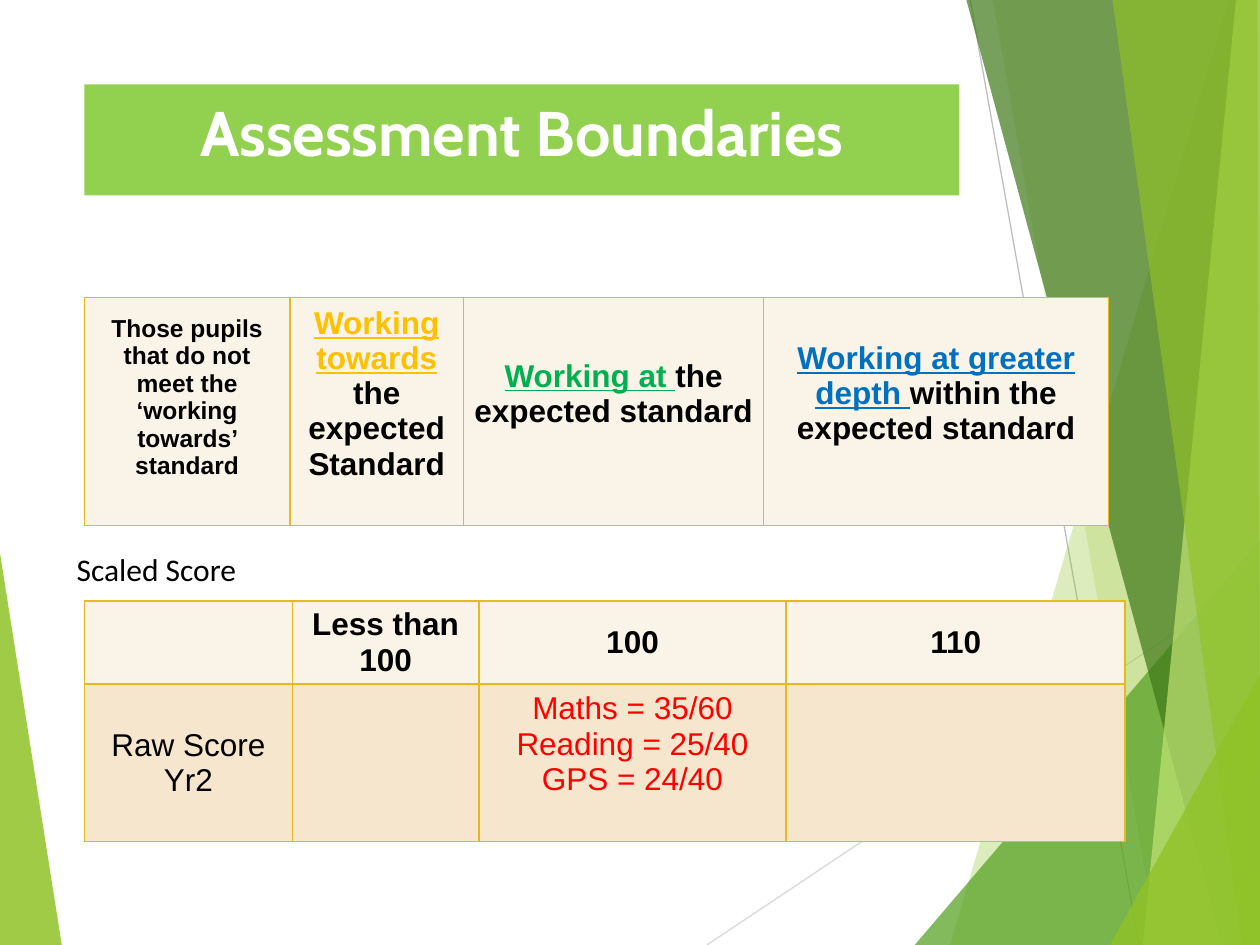
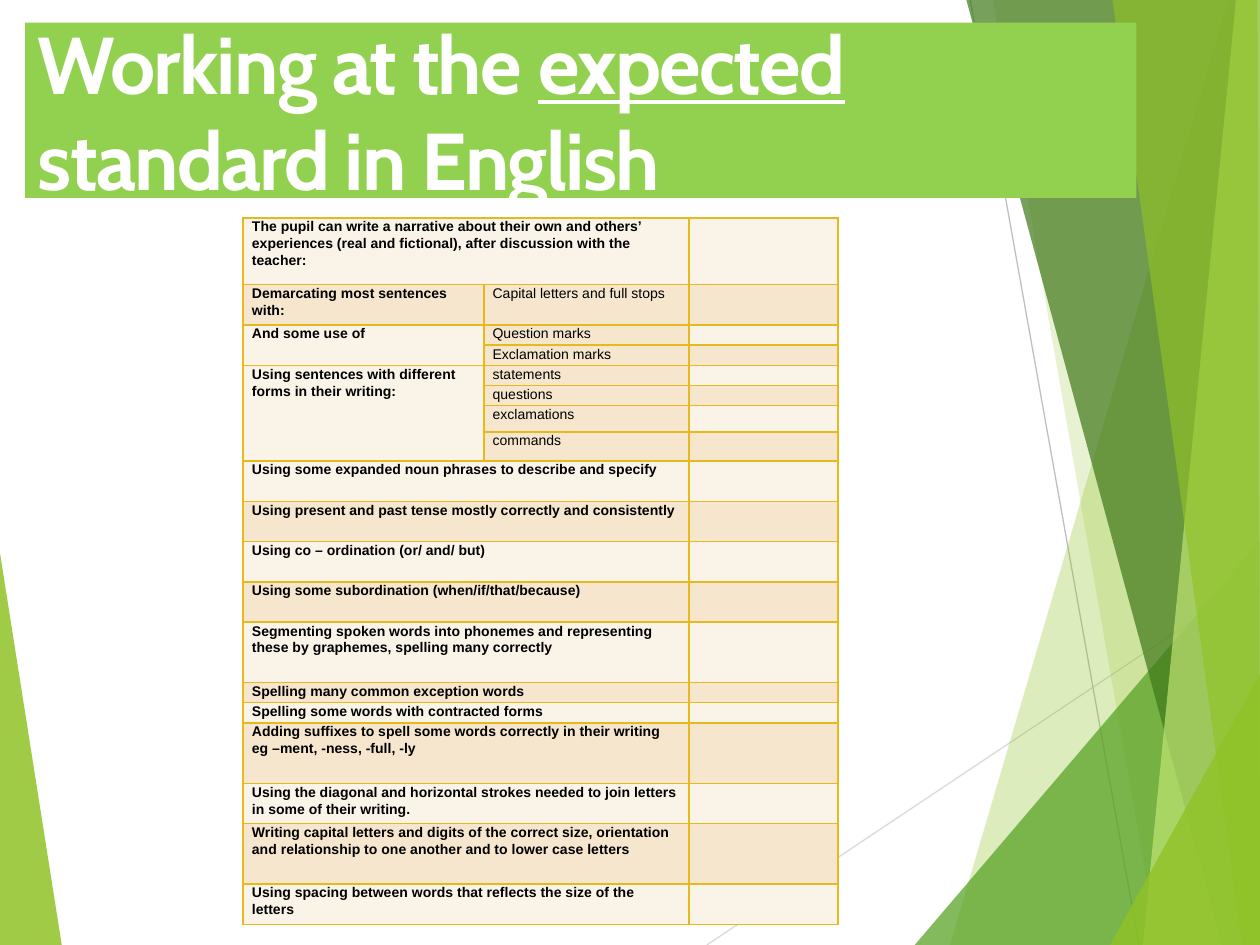
"""Builds two slides about assessment boundaries and writing standards."""
import dataclasses

import pptx
import pptx.dml.color
import pptx.enum.shapes
import pptx.enum.text
import pptx.oxml.ns
import pptx.util
from lxml import etree

ALIGN = pptx.enum.text.PP_ALIGN
ANCHOR = pptx.enum.text.MSO_ANCHOR


@dataclasses.dataclass(frozen=True)
class Theme:
    """Colours, fonts and type sizes of the slides."""
    band: str = "92D050"
    white: str = "FFFFFF"
    ink: str = "000000"
    gold: str = "E6B91E"
    light: str = "FAF3E8"
    dark: str = "F5E6CD"
    leaf: str = "90C226"
    grass: str = "54A021"
    forest: str = "3F7819"
    lime: str = "C0E474"
    towards: str = "FFC000"
    expected: str = "00B050"
    greater: str = "0070C0"
    score: str = "FF0000"
    heading_font: str = "Cabin"
    body_font: str = "Arial"
    label_font: str = "Calibri"
    heading: int = 36
    big_heading: int = 46
    body: int = 18
    note: int = 14
    small: int = 8


T = Theme()

WINGS = [
    (T.leaf, 85, [(0, 43.9), (4.9, 75), (0, 75)]),
    (T.leaf, 30, [(97.5, 0), (75.4, 75), (100, 75), (100, 0)]),
    (T.leaf, 20, [(78.8, 0), (91.9, 75), (100, 75), (100, 0)]),
    (T.grass, 72, [(72.6, 75), (100, 42.9), (100, 75)]),
    (T.forest, 70, [(76.7, 0), (97, 75), (100, 75), (100, 0)]),
    (T.lime, 70, [(98.1, 0), (90.7, 75), (100, 75), (100, 0)]),
    (T.leaf, 65, [(88.3, 0), (98.6, 75), (100, 75), (99.8, 0)]),
    (T.leaf, 80, [(88.1, 75), (100, 53.5), (100, 75)]),
]
RAYS = [("D9D9D9", (56.1, 75, 100, 45.7)), ("BFBFBF", (77, 0, 90.4, 75))]

STANDARDS = [
    ("Those pupils that do not meet the ‘working towards’ standard", T.ink),
    [("Working towards ", T.towards), "the expected Standard"],
    [("Working at ", T.expected), "the expected standard"],
    [("Working at greater depth ", T.greater), "within the expected standard"],
]
RAW_SCORES = ["Maths = 35/60", "Reading = 25/40", "GPS = 24/40"]

CHECKLIST = [
    (5.3, "The pupil can write a narrative about their own and others’ experiences "
          "(real and fictional), after discussion with the teacher:", None),
    (3.2, "Demarcating most sentences with:", "Capital letters and full stops"),
    (1.6, "And some use of", "Question marks"),
    (1.6, None, "Exclamation marks"),
    (1.6, "Using sentences with different forms in their writing:", "statements"),
    (1.6, None, "questions"),
    (2.1, None, "exclamations"),
    (2.3, None, "commands"),
    (3.2, "Using some expanded noun phrases to describe and specify", None),
    (3.2, "Using present and past tense mostly correctly and consistently", None),
    (3.2, "Using co – ordination (or/ and/ but)", None),
    (3.2, "Using some subordination (when/if/that/because)", None),
    (4.8, "Segmenting spoken words into phonemes and representing these by "
          "graphemes, spelling many correctly", None),
    (1.6, "Spelling many common exception words", None),
    (1.6, "Spelling some words with contracted forms", None),
    (4.8, "Adding suffixes to spell some words correctly in their writing "
          "eg –ment, -ness, -full, -ly", None),
    (3.2, "Using the diagonal and horizontal strokes needed to join letters "
          "in some of their writing.", None),
    (4.8, "Writing capital letters and digits of the correct size, orientation "
          "and relationship to one another and to lower case letters", None),
    (3.2, "Using spacing between words that reflects the size of the letters", None),
]


def grid(n):
    """Length of n cells of the 100 by 75 slide grid."""
    return pptx.util.Inches(n / 10)


def rgb(code):
    """Colour from its hex code."""
    return pptx.dml.color.RGBColor.from_string(code)


def sub(parent, tag, **attrs):
    """Append a DrawingML element."""
    return etree.SubElement(parent, pptx.oxml.ns.qn(tag), attrs)


def write(tf, paragraphs, size, font=T.body_font, color=T.ink, bold=False,
          align=ALIGN.CENTER, spacing=None):
    """Write paragraphs of runs; a (text, colour) run is underlined."""
    for i, runs in enumerate(paragraphs):
        p = tf.add_paragraph() if i else tf.paragraphs[0]
        p.alignment, p.line_spacing = align, spacing
        p.font.size, p.font.name, p.font.bold = pptx.util.Pt(size), font, bold
        p.font.color.rgb = rgb(color)
        for run in [runs] if isinstance(runs, str) else runs:
            text, accent = (run, None) if isinstance(run, str) else run
            r = p.add_run()
            r.text = text
            if accent:
                r.font.underline = True
                r.font.color.rgb = rgb(accent)


def add_wing(s, color, opacity, points):
    """Draw one translucent polygon of the backdrop."""
    tenths = [(x * 10, y * 10) for x, y in points]
    builder = s.shapes.build_freeform(*tenths[0], scale=9144)
    builder.add_line_segments(tenths[1:], close=True)
    sp = builder.convert_to_shape()
    sp.shadow.inherit = False
    sp.line.fill.background()
    sp.fill.solid()
    sp.fill.fore_color.rgb = rgb(color)
    fill = sp.fill._xPr.find(pptx.oxml.ns.qn("a:solidFill"))
    sub(fill[0], "a:alpha", val=str(opacity * 1000))
    return sp


def add_ray(s, color, ends):
    """Draw one thin line of the backdrop."""
    line = s.shapes.add_connector(pptx.enum.shapes.MSO_CONNECTOR.STRAIGHT, *map(grid, ends))
    line.line.color.rgb = rgb(color)
    line.line.width = pptx.util.Pt(0.75)
    sub(line._element.spPr, "a:effectLst")
    return line


def add_backdrop(prs, s):
    """Draw the backdrop and move it to the slide master."""
    first, *rest = WINGS
    shapes = [add_wing(s, *first)]
    shapes += [add_ray(s, *ray) for ray in RAYS]
    shapes += [add_wing(s, *wing) for wing in rest]
    tree = prs.slide_master.shapes._spTree
    for i, shape in enumerate(shapes):
        tree.insert(2 + i, shape._element)


def add_title(s, box, runs, size, align, anchor, track=0):
    """Turn the title placeholder into a green band."""
    sp = s.shapes.title
    sp.left, sp.top, sp.width, sp.height = map(grid, box)
    sp.fill.solid()
    sp.fill.fore_color.rgb = rgb(T.band)
    tf = sp.text_frame
    tf.word_wrap, tf.vertical_anchor = True, anchor
    tf.margin_top = grid(0.7) if anchor == ANCHOR.TOP else grid(0.5)
    write(tf, [runs], size, T.heading_font, T.white, True, align)
    for r in tf.paragraphs[0].runs:
        r._r.get_or_add_rPr().set("spc", str(track * 100))


def add_label(s, box, text):
    """Add a plain label."""
    tf = s.shapes.add_textbox(*map(grid, box)).text_frame
    tf.word_wrap = True
    write(tf, [text], T.body, T.label_font, align=ALIGN.LEFT)


def add_grid_table(s, left, top, cols, rows, size, margins, dark_cols=()):
    """Add a gold-ruled table with alternating row tints."""
    frame = s.shapes.add_table(len(rows), len(cols), *map(grid, (left, top, sum(cols), sum(rows))))
    table = frame.table
    for col, width in zip(table.columns, cols):
        col.width = grid(width)
    for i, height in enumerate(rows):
        table.rows[i].height = grid(height)
        for j in range(len(cols)):
            cell = table.cell(i, j)
            cell.margin_left = cell.margin_right = grid(margins[0])
            cell.margin_top = cell.margin_bottom = grid(margins[1])
            tcPr = cell._tc.get_or_add_tcPr()
            for side in ("a:lnL", "a:lnR", "a:lnT", "a:lnB"):
                sub(sub(sub(tcPr, side, w="12700"), "a:solidFill"), "a:srgbClr", val=T.gold)
            cell.fill.solid()
            cell.fill.fore_color.rgb = rgb(T.dark if i % 2 or j in dark_cols else T.light)
            end = cell.text_frame.paragraphs[0]._p.get_or_add_endParaRPr()
            end.set("sz", str(size * 100))
    return table


def fill_cell(cell, paragraphs, size=T.body, lift=0, **style):
    """Write centred text in a cell, raised by a deeper bottom margin."""
    cell.vertical_anchor = ANCHOR.MIDDLE
    cell.margin_bottom += grid(lift)
    write(cell.text_frame, paragraphs, size, **style)


def add_boundaries(s):
    """Fill the slide of assessment boundaries."""
    add_title(s, (6.7, 6.7, 69.4, 8.8), "Assessment Boundaries", T.heading,
              ALIGN.CENTER, ANCHOR.TOP)
    levels = add_grid_table(s, 6.7, 23.6, (16.3, 13.8, 23.8, 27.4), (18.1,), T.body, (0.8, 0.5))
    fill_cell(levels.cell(0, 0), STANDARDS[0][:1], T.note, 2.2, bold=True)
    for j, runs in enumerate(STANDARDS[1:], 1):
        fill_cell(levels.cell(0, j), [runs], lift=2.8, bold=True)
    scores = add_grid_table(s, 6.7, 47.7, (16.5, 14.8, 24.4, 26.9), (6.6, 12.5), T.body, (1, 0.5))
    for j, text in enumerate(("Less than 100", "100", "110"), 1):
        fill_cell(scores.cell(0, j), [text], bold=True)
    fill_cell(scores.cell(1, 0), ["Raw Score Yr2"])
    fill_cell(scores.cell(1, 2), RAW_SCORES, lift=3, color=T.score)
    add_label(s, (5.1, 43.2, 28.4, 4), "Scaled Score")


def add_checklist(s):
    """Fill the slide of expected standards."""
    add_title(s, (2, 1.8, 88.2, 13.9),
              ["Working at the ", ("expected", T.white), " standard in English"],
              T.big_heading, ALIGN.LEFT, ANCHOR.MIDDLE, track=-1)
    heights = [row[0] for row in CHECKLIST]
    table = add_grid_table(s, 19.3, 17.3, (19.1, 16.3, 11.8), heights, T.small, (0.7, 0), (1,))
    group = 0
    for i, (_, skill, detail) in enumerate(CHECKLIST):
        if skill:
            group = i
        elif i + 1 == len(CHECKLIST) or CHECKLIST[i + 1][1]:
            table.cell(group, 0).merge(table.cell(i, 0))
        if not detail:
            table.cell(i, 0).merge(table.cell(i, 1))
        for j, text in enumerate((skill, detail)):
            if text:
                write(table.cell(i, j).text_frame, [text], T.small, bold=j == 0,
                      align=ALIGN.LEFT, spacing=1.07)


def main():
    """Build and save the presentation."""
    prs = pptx.Presentation()
    prs.slide_width, prs.slide_height = grid(100), grid(75)
    layout = prs.slide_layouts.get_by_name("Title Only")
    slides = [prs.slides.add_slide(layout) for _ in range(2)]
    add_backdrop(prs, slides[0])
    add_boundaries(slides[0])
    add_checklist(slides[1])
    prs.save("out.pptx")


if __name__ == "__main__":
    main()
